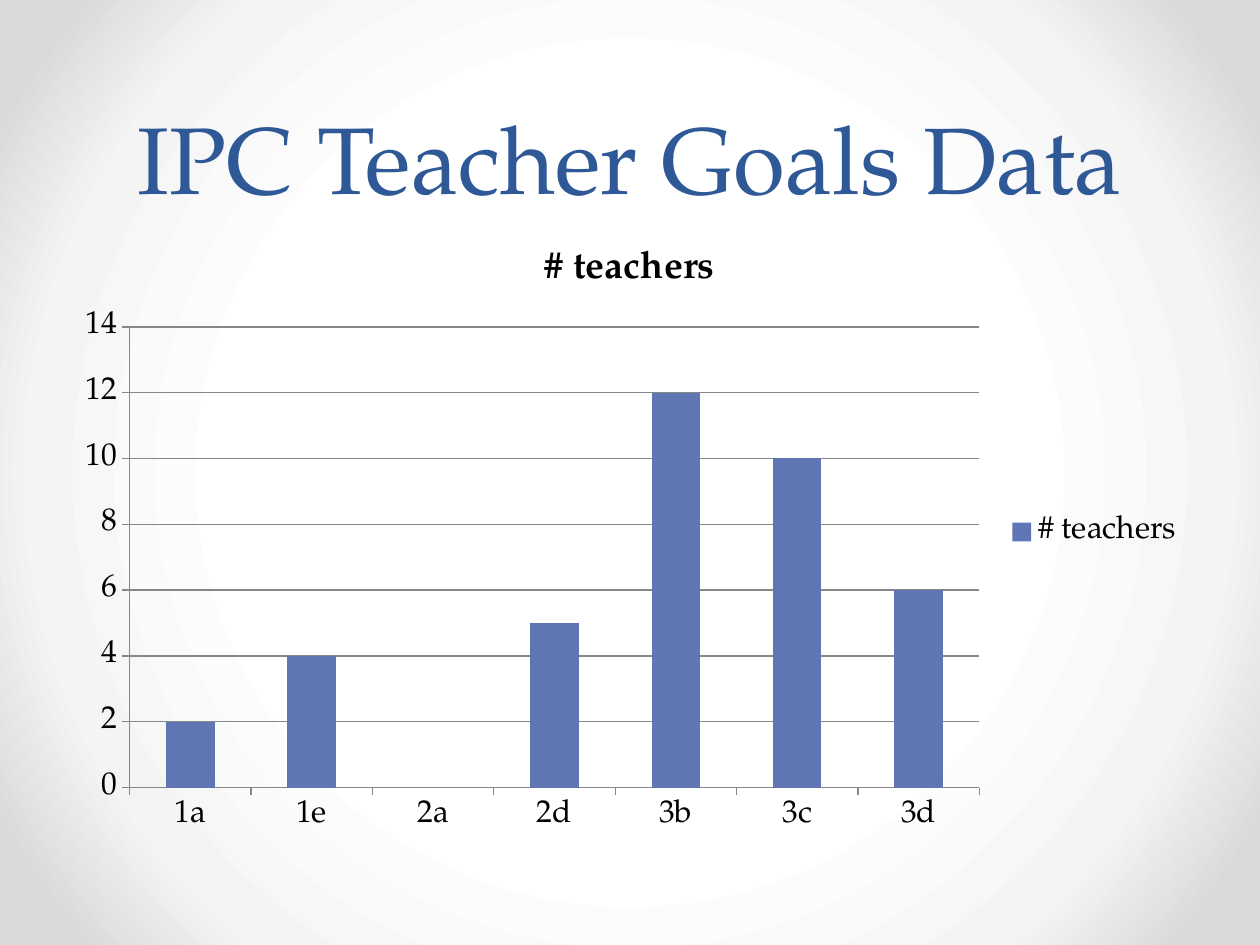
from lxml.etree import SubElement
from pptx import Presentation
from pptx.chart.data import CategoryChartData
from pptx.dml.color import RGBColor
from pptx.enum.chart import XL_CHART_TYPE, XL_LEGEND_POSITION, XL_TICK_MARK
from pptx.enum.text import MSO_ANCHOR, PP_ALIGN
from pptx.oxml.ns import qn
from pptx.util import Emu, Pt

FONT = "TeX Gyre Pagella"
COLORS = {
    "title": "2F5897",
    "text": "000000",
    "bars": "6076B4",
    "lines": "878787",
    "center": "FFFFFF",
    "middle": "F4F4F4",
    "edge": "DADADA",
}


def px(length):
    return Emu(round(length * 914400 / 126))


def write(frame, text, size, color, bold=False, line=None):
    paragraph = frame.paragraphs[0]
    paragraph.alignment = PP_ALIGN.CENTER
    if line:
        paragraph.line_spacing = Pt(line)
    run = paragraph.add_run()
    run.text = text
    run.font.name = FONT
    run.font.size = Pt(size)
    run.font.bold = bold
    run.font.color.rgb = RGBColor.from_string(COLORS[color])


deck = Presentation()
deck.slide_width, deck.slide_height = px(1260), px(945)
slide = deck.slides.add_slide(deck.slide_layouts[6])

# Background: radial gradient from the centre
backdrop = slide.background.fill
backdrop.gradient()
gradient = slide.background._cSld.find(".//" + qn("a:gradFill"))
for child in list(gradient):
    gradient.remove(child)
stops = SubElement(gradient, qn("a:gsLst"))
for percent, color in ((50, "center"), (76, "middle"), (92, "edge")):
    stop = SubElement(stops, qn("a:gs"), pos=str(percent * 1000))
    SubElement(stop, qn("a:srgbClr"), val=COLORS[color])
circle = SubElement(gradient, qn("a:path"), {"path": "circle"})
SubElement(circle, qn("a:fillToRect"), {side: "50000" for side in "ltrb"})

# Title
heading = slide.shapes.add_textbox(px(63), px(0), px(1134), px(220)).text_frame
heading.word_wrap = True
heading.vertical_anchor = MSO_ANCHOR.BOTTOM
write(heading, "IPC Teacher Goals Data", size=54, color="title", line=58)

# Column chart of teachers per goal
goals = CategoryChartData()
goals.categories = ["1a", "1e", "2a", "2d", "3b", "3c", "3d"]
goals.add_series("# teachers", (2, 4, 0, 5, 12, 10, 6))
chart = slide.shapes.add_chart(
    XL_CHART_TYPE.COLUMN_CLUSTERED, px(63), px(220), px(1134), px(624), goals
).chart
chart.font.name = FONT
chart.font.size = Pt(18)
chart.font.color.rgb = RGBColor.from_string(COLORS["text"])

chart.has_title = True
write(chart.chart_title.text_frame, "# teachers", size=21.6, color="text", bold=True)
chart.chart_title.include_in_layout = False

chart.has_legend = True
chart.legend.position = XL_LEGEND_POSITION.RIGHT
chart.legend.include_in_layout = False

columns = chart.plots[0]
columns.gap_width = 150
columns.vary_by_categories = False
teachers = columns.series[0]
teachers.smooth = False
teachers.invert_if_negative = False
teachers.format.fill.solid()
teachers.format.fill.fore_color.rgb = RGBColor.from_string(COLORS["bars"])

# Axes and gridlines
counts = chart.value_axis
counts.minimum_scale, counts.maximum_scale, counts.major_unit = 0, 14, 2
counts.has_major_gridlines = True
for axis in (chart.category_axis, counts):
    axis.major_tick_mark = XL_TICK_MARK.OUTSIDE
    axis.minor_tick_mark = XL_TICK_MARK.NONE
for rule in (chart.category_axis, counts, counts.major_gridlines):
    rule.format.line.color.rgb = RGBColor.from_string(COLORS["lines"])
    rule.format.line.width = Pt(0.75)

deck.save("out.pptx")
